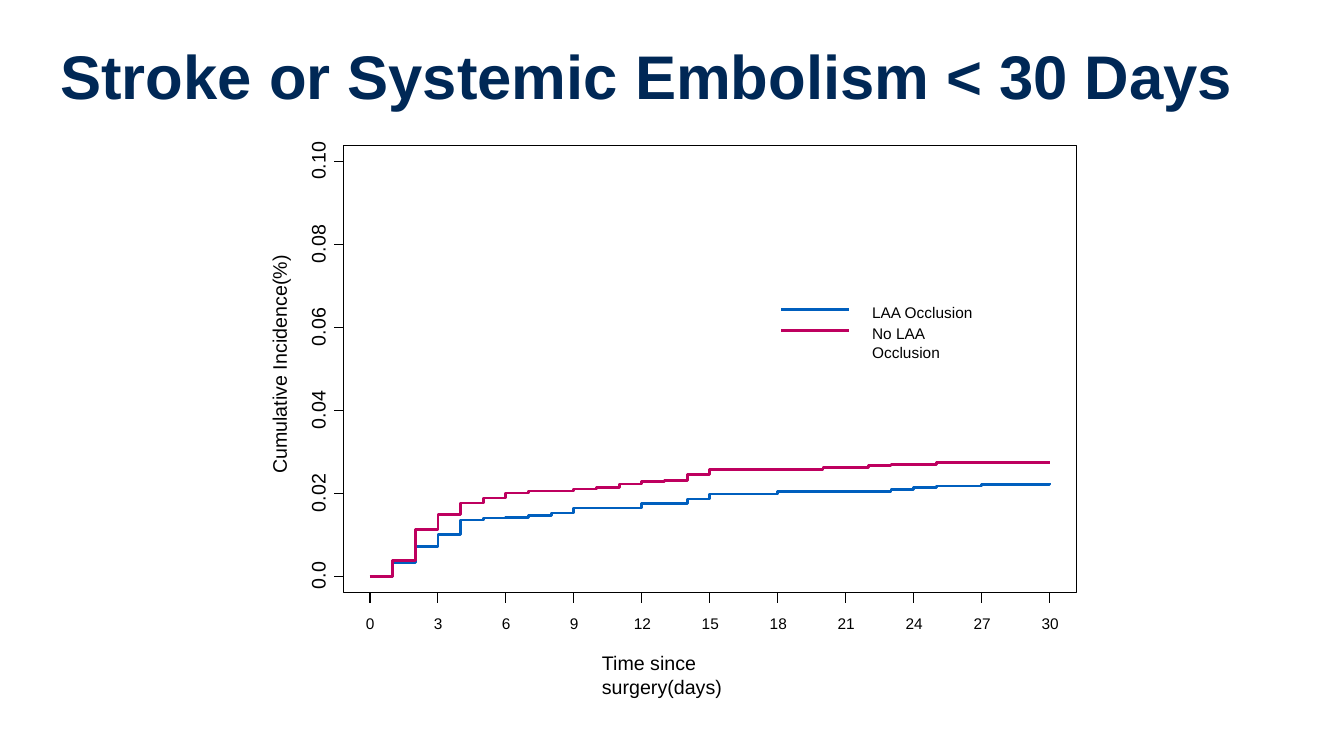
from dataclasses import dataclass

from lxml import etree
from pptx import Presentation
from pptx.dml.color import RGBColor
from pptx.enum.shapes import MSO_CONNECTOR, MSO_SHAPE
from pptx.enum.text import MSO_ANCHOR
from pptx.oxml.ns import qn
from pptx.shapes.base import BaseShape
from pptx.slide import Slide
from pptx.util import Inches, Pt

STRAIGHT = MSO_CONNECTOR.STRAIGHT
RECTANGLE = MSO_SHAPE.RECTANGLE
TOP, MIDDLE = MSO_ANCHOR.TOP, MSO_ANCHOR.MIDDLE


@dataclass(frozen=True)
class Theme:
    font: str = "Arial"
    title: str = "002856"
    title_outline: str = "002060"
    ink: str = "000000"
    occlusion: str = "005FBE"
    no_occlusion: str = "BE005F"
    title_size: float = 44
    axis_size: float = 14
    small_size: float = 11
    thin: float = 0.75
    thick: float = 2


@dataclass(frozen=True)
class Label:
    text: str
    left: float
    top: float
    width: float
    height: float
    size: float
    rotation: int = 0
    wrap: bool = False


@dataclass(frozen=True)
class Curve:
    """Cumulative incidence as (day, percent) steps, with its legend entry."""
    name: str
    color: str
    legend_y: float
    steps: tuple[tuple[int, float], ...]


THEME = Theme()
FRAME_LEFT, FRAME_TOP, FRAME_WIDTH, FRAME_HEIGHT = 3.41, 1.44, 7.27, 4.44
FRAME_BOTTOM = FRAME_TOP + FRAME_HEIGHT
DAY_0_X, DAY_30_X = 3.67, 10.41
PERCENT_0_Y, PERCENT_10_Y = 5.72, 1.6
TICK = 0.1

CURVES = (
    Curve("LAA Occlusion", THEME.occlusion, 3.07, (
        (0, 0), (1, 0.34), (2, 0.73), (3, 1.02), (4, 1.36), (5, 1.41),
        (6, 1.43), (7, 1.48), (8, 1.53), (9, 1.65), (12, 1.75), (14, 1.87),
        (15, 1.99), (18, 2.04), (23, 2.09), (24, 2.14), (25, 2.18),
        (27, 2.21), (30, 2.26))),
    Curve("No LAA Occlusion", THEME.no_occlusion, 3.28, (
        (0, 0), (1, 0.39), (2, 1.14), (3, 1.5), (4, 1.77), (5, 1.89),
        (6, 2.01), (7, 2.06), (9, 2.11), (10, 2.14), (11, 2.23), (12, 2.28),
        (13, 2.31), (14, 2.45), (15, 2.57), (20, 2.62), (22, 2.67),
        (23, 2.69), (25, 2.74), (30, 2.74))),
)


def day_x(day: float) -> float:
    return DAY_0_X + (DAY_30_X - DAY_0_X) * day / 30


def percent_y(percent: float) -> float:
    return PERCENT_0_Y + (PERCENT_10_Y - PERCENT_0_Y) * percent / 10


def style_line(s: BaseShape, color: str, width: float) -> None:
    s.line.color.rgb = RGBColor.from_string(color)
    s.line.width = Pt(width)


def add_line(slide: Slide, x1: float, y1: float, x2: float, y2: float,
             color: str = THEME.ink, width: float = THEME.thin) -> None:
    s = slide.shapes.add_connector(
        STRAIGHT, Inches(x1), Inches(y1), Inches(x2), Inches(y2))
    style_line(s, color, width)
    etree.SubElement(s._element.spPr, qn("a:effectLst"))


def add_label(slide: Slide, label: Label) -> None:
    s = slide.shapes.add_textbox(Inches(label.left), Inches(label.top),
                                 Inches(label.width), Inches(label.height))
    s.rotation = label.rotation
    tf = s.text_frame
    frame_format = {"margin_left": 0, "margin_right": 0, "margin_top": 0,
                    "margin_bottom": 0, "word_wrap": label.wrap,
                    "vertical_anchor": TOP}
    for name, value in frame_format.items():
        setattr(tf, name, value)
    r = tf.paragraphs[0].add_run()
    r.text = label.text
    for name, value in {"name": THEME.font, "size": Pt(label.size)}.items():
        setattr(r.font, name, value)
    r.font.color.rgb = RGBColor.from_string(THEME.ink)


def add_title(slide: Slide, text: str) -> None:
    s = slide.shapes.add_textbox(
        Inches(0.5), Inches(0.06), Inches(12.32), Inches(1.45))
    tf = s.text_frame
    tf.word_wrap = True
    tf.vertical_anchor = MIDDLE
    p = tf.paragraphs[0]
    p.line_spacing = 0.9
    r = p.add_run()
    r.text = text
    title_format = {"name": THEME.font, "size": Pt(THEME.title_size), "bold": True}
    for name, value in title_format.items():
        setattr(r.font, name, value)
    r.font.color.rgb = RGBColor.from_string(THEME.title)
    outline = etree.Element(qn("a:ln"), w=str(Pt(THEME.thin)))
    fill = etree.SubElement(outline, qn("a:solidFill"))
    etree.SubElement(fill, qn("a:srgbClr"), val=THEME.title_outline)
    r._r.get_or_add_rPr().insert(0, outline)


def add_axes(slide: Slide) -> None:
    add_label(slide, Label("Time since surgery(days)", 5.97, 6.46, 1.4, 0.48,
                           THEME.axis_size, wrap=True))
    add_label(slide, Label("Cumulative Incidence(%)", 1.63, 3.41, 2.31, 0.27,
                           THEME.axis_size, rotation=270))
    for percent in range(0, 11, 2):
        y = percent_y(percent)
        add_line(slide, FRAME_LEFT, y, FRAME_LEFT - TICK, y)
        text = f"{percent / 100:.2f}" if percent else "0.0"
        width = 0.12 * len(text)
        add_label(slide, Label(text, 3.17 - width / 2, y - 0.19, width, 0.27,
                               THEME.axis_size, rotation=270))
    add_line(slide, FRAME_LEFT, PERCENT_0_Y, FRAME_LEFT, PERCENT_10_Y)
    for day in range(0, 31, 3):
        x, text = day_x(day), str(day)
        add_line(slide, x, FRAME_BOTTOM, x, FRAME_BOTTOM + TICK)
        add_label(slide, Label(text, x - 0.04 * len(text), 6.09,
                               0.06 + 0.08 * len(text), 0.19, THEME.small_size))
    add_line(slide, DAY_0_X, FRAME_BOTTOM, DAY_30_X, FRAME_BOTTOM)
    s = slide.shapes.add_shape(
        RECTANGLE, Inches(FRAME_LEFT), Inches(FRAME_TOP),
        Inches(FRAME_WIDTH), Inches(FRAME_HEIGHT))
    s.shadow.inherit = False
    s.fill.background()
    style_line(s, THEME.ink, THEME.thin)


def add_curve(slide: Slide, curve: Curve) -> None:
    """Draw the curve level up to each new day, then vertical to its value."""
    points = []
    level = PERCENT_0_Y
    for day, percent in curve.steps:
        x = day_x(day)
        points.append((Inches(x), Inches(level)))
        level = percent_y(percent)
        points.append((Inches(x), Inches(level)))
    builder = slide.shapes.build_freeform(*points[0])
    builder.add_line_segments(points[1:], close=False)
    s = builder.convert_to_shape()
    s.shadow.inherit = False
    s.fill.background()
    style_line(s, curve.color, THEME.thick)


def add_legend_entry(slide: Slide, curve: Curve) -> None:
    y = curve.legend_y
    add_line(slide, 7.75, y, 8.42, y, curve.color, THEME.thick)
    add_label(slide, Label(curve.name, 8.65, y - 0.06, 1.1, 0.19,
                           THEME.small_size, wrap=True))


def main() -> None:
    prs = Presentation()
    prs.slide_width, prs.slide_height = Inches(13.33), Inches(7.5)
    slide = prs.slides.add_slide(prs.slide_layouts[6])
    add_title(slide, "Stroke or Systemic Embolism < 30 Days")
    add_axes(slide)
    for curve in CURVES:
        add_curve(slide, curve)
    for curve in CURVES:
        add_legend_entry(slide, curve)
    prs.save("out.pptx")


if __name__ == "__main__":
    main()
